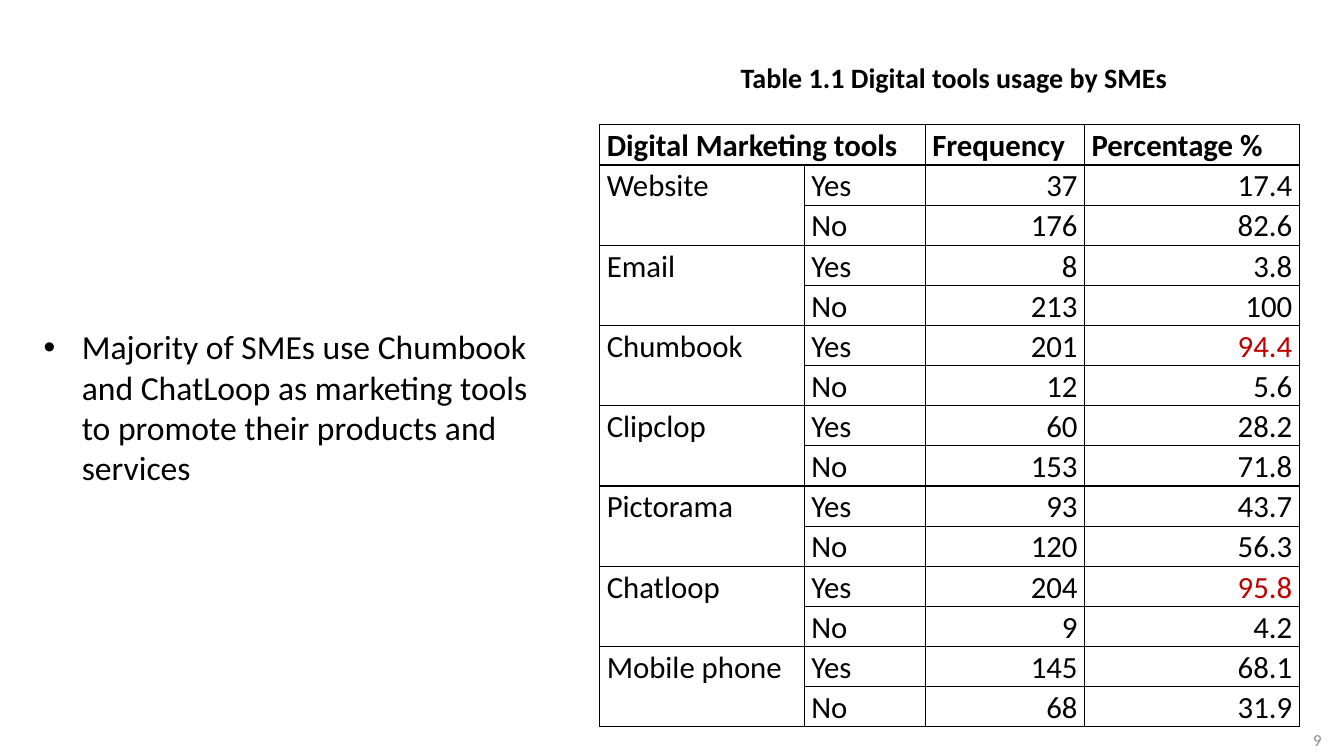
from dataclasses import dataclass

from lxml import etree
from pptx import Presentation
from pptx.dml.color import RGBColor
from pptx.enum.text import MSO_ANCHOR, MSO_AUTO_SIZE, PP_ALIGN
from pptx.oxml.ns import qn
from pptx.util import Inches, Pt

LEFT, RIGHT = PP_ALIGN.LEFT, PP_ALIGN.RIGHT
TOP, MIDDLE = MSO_ANCHOR.TOP, MSO_ANCHOR.MIDDLE
GROW, FIXED = MSO_AUTO_SIZE.SHAPE_TO_FIT_TEXT, MSO_AUTO_SIZE.NONE

FONT = "Calibri"
BLACK, RED, GRAY = "000000", "C00000", "8C8C8C"

# Slide grid: 40 columns by 25 rows
WIDTH, HEIGHT = Inches(13.33), Inches(7.5)
COL, ROW = WIDTH / 40, HEIGHT / 25


@dataclass
class Label:
    text: str
    x: float
    y: float
    w: float
    h: float
    size: int
    color: str = BLACK
    bold: bool = False
    wrap: bool = True
    fit: MSO_AUTO_SIZE = GROW
    align: PP_ALIGN = LEFT
    anchor: MSO_ANCHOR = TOP
    bullet: bool = False


@dataclass
class Tool:
    name: str
    yes: tuple[str, str]
    no: tuple[str, str]
    color: str = BLACK


LABELS = [
    Label("Majority of SMEs use Chumbook and ChatLoop as marketing tools "
          "to promote their products and services",
          1, 10.63, 15.66, 5.73, 24, bullet=True),
    Label("Table 1.1 Digital tools usage by SMEs",
          21.75, 1.83, 13.38, 1.47, 20, bold=True, wrap=False),
    Label("9", 30.63, 23.8, 9, 1.33, 12, GRAY,
          fit=FIXED, align=RIGHT, anchor=MIDDLE),
]

HEADS = {0: "Digital Marketing tools", 2: "Frequency", 3: "Percentage %"}
SPANS = [6.09, 3.6, 4.74, 6.39]
TOOLS = [
    Tool("Website", ("37", "17.4"), ("176", "82.6")),
    Tool("Email", ("8", "3.8"), ("213", "100")),
    Tool("Chumbook", ("201", "94.4"), ("12", "5.6"), RED),
    Tool("Clipclop", ("60", "28.2"), ("153", "71.8")),
    Tool("Pictorama", ("93", "43.7"), ("120", "56.3")),
    Tool("Chatloop", ("204", "95.8"), ("9", "4.2"), RED),
    Tool("Mobile phone", ("145", "68.1"), ("68", "31.9")),
]


def cols(count: float) -> int:
    return round(count * COL)


def rows(count: float) -> int:
    return round(count * ROW)


def paint(hue: str) -> RGBColor:
    return RGBColor.from_string(hue)


def add_run(para, text: str, size: int, color: str, bold: bool) -> None:
    run = para.add_run()
    run.text = text
    font = run.font
    font.name, font.size, font.bold = FONT, Pt(size), bold
    font.color.rgb = paint(color)


def add_bullet(para) -> None:
    props = para._p.get_or_add_pPr()
    props.set("marL", str(Inches(0.38)))
    props.set("indent", str(-Inches(0.38)))
    etree.SubElement(props, qn("a:buFont"), typeface="Arial")
    etree.SubElement(props, qn("a:buChar"), char="•")


def add_label(slide, item: Label) -> None:
    box = slide.shapes.add_textbox(cols(item.x), rows(item.y),
                                   cols(item.w), rows(item.h))
    frame = box.text_frame
    frame.word_wrap = item.wrap
    frame.auto_size = item.fit
    frame.vertical_anchor = item.anchor
    para = frame.paragraphs[0]
    para.alignment = item.align
    if item.bullet:
        add_bullet(para)
    add_run(para, item.text, item.size, item.color, item.bold)


def frame_cell(cell) -> None:
    props = cell._tc.get_or_add_tcPr()
    for side in ("a:lnL", "a:lnR", "a:lnT", "a:lnB"):
        line = etree.SubElement(props, qn(side), w=str(Pt(1)))
        fill = etree.SubElement(line, qn("a:solidFill"))
        etree.SubElement(fill, qn("a:srgbClr"), val=BLACK)
    cell.fill.background()
    cell.margin_left = cell.margin_right = Inches(0.07)
    cell.margin_top = cell.margin_bottom = 0


def fill_cell(cell, text: str, align: PP_ALIGN = LEFT,
              color: str = BLACK, bold: bool = False) -> None:
    para = cell.text_frame.paragraphs[0]
    para.alignment = align
    para.line_spacing = 1.07
    para.space_after = Pt(8)
    add_run(para, text, 22, color, bold)


def add_grid(slide) -> None:
    count = 1 + 2 * len(TOOLS)
    frame = slide.shapes.add_table(count, len(SPANS), cols(17.85), rows(4.13),
                                   cols(sum(SPANS)), rows(count))
    table = frame.table
    table.first_row = table.horz_banding = False
    for column, span in zip(table.columns, SPANS):
        column.width = cols(span)
    for cell in table.iter_cells():
        frame_cell(cell)

    # Header row
    table.cell(0, 0).merge(table.cell(0, 1))
    for index, head in HEADS.items():
        fill_cell(table.cell(0, index), head, bold=True)

    # Two rows for each tool
    for index, tool in enumerate(TOOLS):
        top = 1 + 2 * index
        table.cell(top, 0).merge(table.cell(top + 1, 0))
        fill_cell(table.cell(top, 0), tool.name)
        pairs = [("Yes", tool.yes, tool.color), ("No", tool.no, BLACK)]
        for row, (reply, (total, share), color) in enumerate(pairs, top):
            fill_cell(table.cell(row, 1), reply)
            fill_cell(table.cell(row, 2), total, RIGHT)
            fill_cell(table.cell(row, 3), share, RIGHT, color)


def main() -> None:
    deck = Presentation()
    deck.slide_width, deck.slide_height = WIDTH, HEIGHT
    slide = deck.slides.add_slide(deck.slide_layouts[6])
    add_grid(slide)
    for item in LABELS:
        add_label(slide, item)
    deck.save("out.pptx")


if __name__ == "__main__":
    main()
